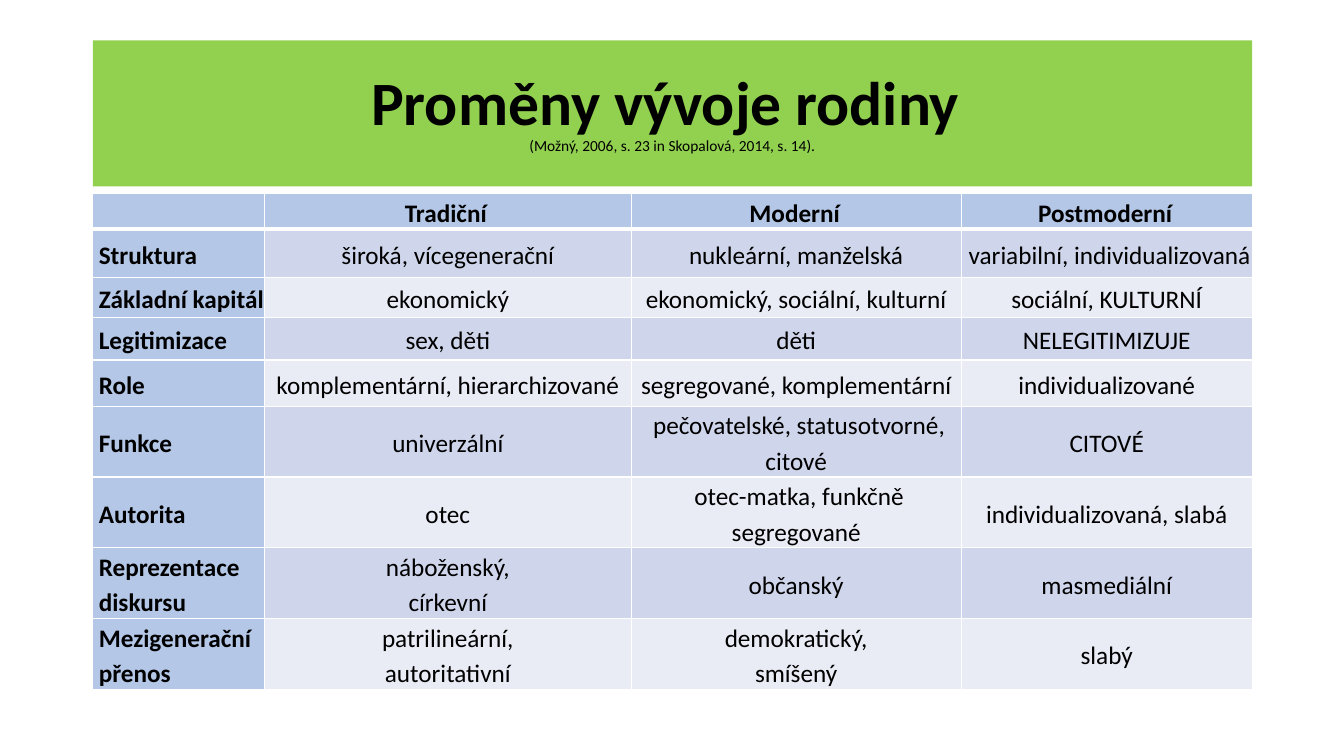
from dataclasses import dataclass

from pptx import Presentation
from pptx.dml.color import RGBColor
from pptx.enum.text import MSO_ANCHOR, MSO_AUTO_SIZE, PP_ALIGN
from pptx.oxml import parse_xml
from pptx.oxml.ns import nsdecls
from pptx.util import Inches, Pt

TITLE = "Proměny vývoje rodiny "
CITE = "(Možný, 2006, s. 23 in Skopalová, 2014, s. 14)."
HEADS = ["", "Tradiční", "Moderní", "Postmoderní"]
ROWS = [
    ["Struktura", "široká, vícegenerační", "nukleární, manželská",
     "variabilní, individualizovaná"],
    ["Základní kapitál", "ekonomický", "ekonomický, sociální, kulturní",
     "sociální, KULTURNÍ"],
    ["Legitimizace", "sex, děti", "děti", "NELEGITIMIZUJE"],
    ["Role", "komplementární, hierarchizované",
     "segregované, komplementární", "individualizované"],
    ["Funkce", "univerzální", "pečovatelské, statusotvorné, citové", "CITOVÉ"],
    ["Autorita", "otec", "otec-matka, funkčně segregované",
     "individualizovaná, slabá"],
    ["Reprezentace\ndiskursu", "náboženský,\ncírkevní", "občanský",
     "masmediální"],
    ["Mezigenerační\npřenos", "patrilineární,\nautoritativní",
     "demokratický,\nsmíšený", "slabý"],
]

WIDE, HIGH = 13.33, 7.5
LEFT, SPAN = 0.92, 11.5
BAND = (0.4, 1.45)
TOP = 1.92
COLS = [1.7, 3.64, 3.28, 2.88]
TALL = [0.35, 0.48, 0.4, 0.42, 0.46] + [0.7] * 4


@dataclass(frozen=True)
class Theme:
    font: str = "Calibri"
    ink: str = "000000"
    band: str = "92D050"
    head: str = "B4C7E7"
    odd: str = "CFD5EA"
    even: str = "E9EBF5"
    rule: str = "FFFFFF"
    big: int = 44
    body: int = 18
    small: int = 11
    thin: int = 1
    thick: int = 3


LOOK = Theme()


def paint(fill, tint):
    fill.solid()
    fill.fore_color.rgb = RGBColor.from_string(tint)


def style(font, size, bold):
    font.name = LOOK.font
    font.size = Pt(size)
    font.bold = bold
    font.color.rgb = RGBColor.from_string(LOOK.ink)


def border(cell, row):
    """Rule all four sides, with a heavy line below the header."""
    props = cell._tc.get_or_add_tcPr()
    heavy = {(0, "B"), (1, "T")}
    for side in "LRTB":
        size = LOOK.thick if (row, side) in heavy else LOOK.thin
        props.append(parse_xml(
            f'<a:ln{side} {nsdecls("a")} w="{Pt(size)}"><a:solidFill>'
            f'<a:srgbClr val="{LOOK.rule}"/></a:solidFill></a:ln{side}>'))


def write(cell, text, row, col):
    cell.margin_left = cell.margin_right = 0
    cell.margin_top = cell.margin_bottom = 0
    cell.vertical_anchor = MSO_ANCHOR.MIDDLE
    frame = cell.text_frame
    # Centred words end in a space, which sets them slightly to the left.
    tail = " " if text and col else ""
    frame.text = "\n".join(line + tail for line in text.split("\n"))
    inset = 0.02 if row == 0 else 0.06 if col < 2 else 0.05
    for para in frame.paragraphs:
        para.alignment = PP_ALIGN.CENTER if col else PP_ALIGN.LEFT
        para.line_spacing = 1.15
        para._p.get_or_add_pPr().set("marL", str(Inches(inset)))
        style(para.font, LOOK.body, row == 0 or col == 0)


def add_title(slide):
    title = slide.shapes.title
    title.left, title.width = Inches(LEFT), Inches(SPAN)
    title.top, title.height = map(Inches, BAND)
    paint(title.fill, LOOK.band)
    frame = title.text_frame
    frame.auto_size = MSO_AUTO_SIZE.NONE
    frame.vertical_anchor = MSO_ANCHOR.MIDDLE
    para = frame.paragraphs[0]
    para.alignment = PP_ALIGN.CENTER
    para.line_spacing = 0.9
    name = para.add_run()
    name.text = TITLE
    style(name.font, LOOK.big, True)
    para.add_line_break()
    cite = para.add_run()
    cite.text = CITE
    style(cite.font, LOOK.small, False)


def add_grid(slide):
    data = [HEADS] + ROWS
    table = slide.shapes.add_table(
        len(data), len(HEADS), Inches(LEFT), Inches(TOP),
        Inches(SPAN), Inches(sum(TALL))).table
    table.first_row = table.horz_banding = False
    for column, width in zip(table.columns, COLS):
        column.width = Inches(width)
    for line, height in zip(table.rows, TALL):
        line.height = Inches(height)
    for row, words in enumerate(data):
        stripe = LOOK.odd if row % 2 else LOOK.even
        for col, text in enumerate(words):
            cell = table.cell(row, col)
            write(cell, text, row, col)
            border(cell, row)
            paint(cell.fill, stripe if row and col else LOOK.head)


def main():
    deck = Presentation()
    deck.slide_width, deck.slide_height = Inches(WIDE), Inches(HIGH)
    slide = deck.slides.add_slide(deck.slide_layouts[5])
    add_title(slide)
    add_grid(slide)
    deck.save("out.pptx")


if __name__ == "__main__":
    main()
